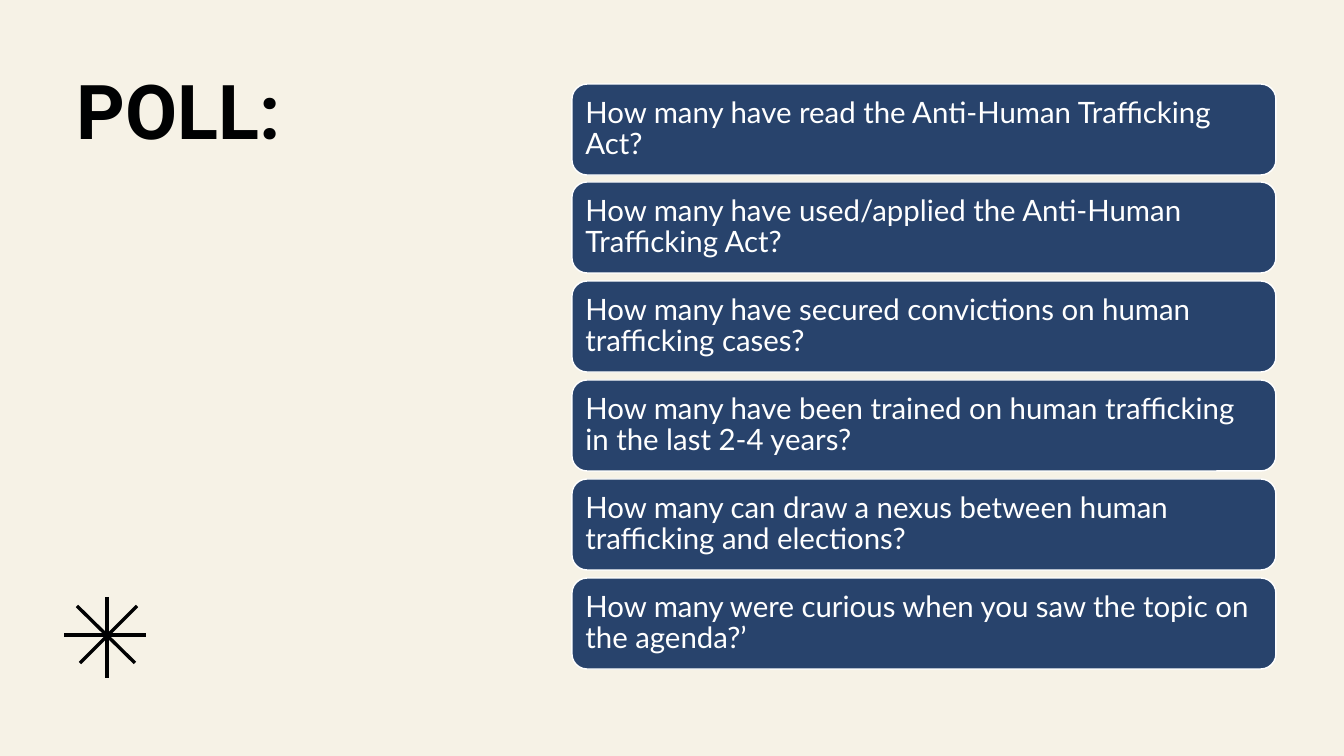
from lxml import etree
from pptx import Presentation
from pptx import util as u
from pptx.dml.color import RGBColor
from pptx.enum import shapes, text
from pptx.oxml.ns import qn

PX = 914400 / 100.8
QUESTIONS = [
    "How many have read the Anti-Human Trafficking Act?",
    "How many have used/applied the Anti-Human Trafficking Act?",
    "How many have secured convictions on human trafficking cases?",
    "How many have been trained on human trafficking in the last 2-4 years?",
    "How many can draw a nexus between human trafficking and elections?",
    "How many were curious when you saw the topic on the agenda?’",
]
STAR_RAYS = [
    (107, 597, 107, 678),
    (146, 635, 64, 635),
    (137, 606, 80, 663),
    (135, 663, 77, 606),
]


def px(*values):
    return [u.Emu(round(v * PX)) for v in values]


def color(value):
    return RGBColor.from_string(value)


class Deck:
    ink, paper, navy, white = "000102", "F6F2E6", "28436C", "FFFFFF"
    title_font = {"name": "Roboto", "size": u.Pt(54), "bold": True}
    card_font = {"name": "Lato", "size": u.Pt(21), "bold": False}

    def __init__(self):
        self.prs = Presentation()
        self.prs.slide_width, self.prs.slide_height = px(1344, 756)
        self.s = self.prs.slides.add_slide(self.prs.slide_layouts[6])
        self.s.background.fill.solid()
        self.s.background.fill.fore_color.rgb = color(self.paper)

    def set_text(self, sp, words, font, ink, spacing, anchor, inset):
        tf = sp.text_frame
        margin_x, margin_y = px(*inset)
        frame = {"word_wrap": True, "vertical_anchor": anchor,
                 "margin_left": margin_x, "margin_right": margin_x,
                 "margin_top": margin_y, "margin_bottom": margin_y}
        for name, value in frame.items():
            setattr(tf, name, value)
        p = tf.paragraphs[0]
        p.alignment = text.PP_ALIGN.LEFT
        p.line_spacing = spacing
        r = p.add_run()
        r.text = words
        for name, value in font.items():
            setattr(r.font, name, value)
        r.font.color.rgb = color(ink)

    def ray(self, x1, y1, x2, y2):
        sp = self.s.shapes.add_connector(
            shapes.MSO_CONNECTOR.STRAIGHT, *px(x1, y1, x2, y2))
        sp.line.color.rgb = color(self.ink)
        sp.line.width = u.Pt(2.45)
        etree.SubElement(sp._element.spPr, qn("a:effectLst"))

    def title(self, words, x, y, w, h):
        sp = self.s.shapes.add_textbox(*px(x, y, w, h))
        self.set_text(sp, words, self.title_font, self.ink, 0.8,
                      text.MSO_ANCHOR.TOP, (10, 5))

    def card(self, words, x, y, w, h):
        sp = self.s.shapes.add_shape(
            shapes.MSO_SHAPE.ROUNDED_RECTANGLE, *px(x, y, w, h))
        sp.shadow.inherit = False
        sp.fill.solid()
        sp.fill.fore_color.rgb = color(self.navy)
        sp.line.color.rgb = color(self.white)
        sp.line.width = u.Pt(1)
        self.set_text(sp, words, self.card_font, self.white, 0.9,
                      text.MSO_ANCHOR.MIDDLE, (9, 9))


def main():
    deck = Deck()
    for ends in STAR_RAYS:
        deck.ray(*ends)
    deck.title("POLL:", 67, 76, 402, 453)
    first_top, last_top = 84, 578
    for i, question in enumerate(QUESTIONS):
        top = first_top + (last_top - first_top) * i // (len(QUESTIONS) - 1)
        deck.card(question, 572, top, 704, 91)
    deck.prs.save("out.pptx")


if __name__ == "__main__":
    main()
